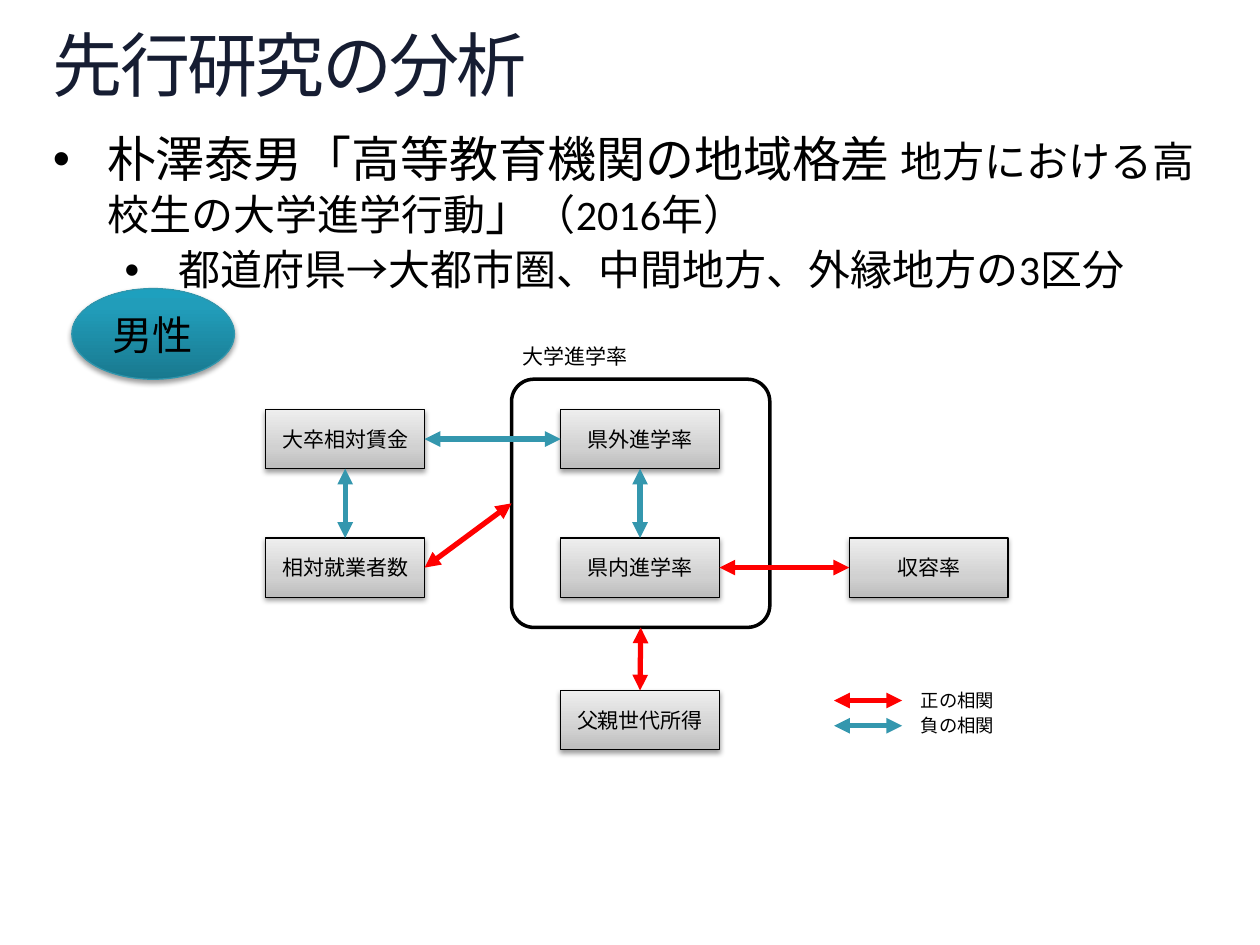
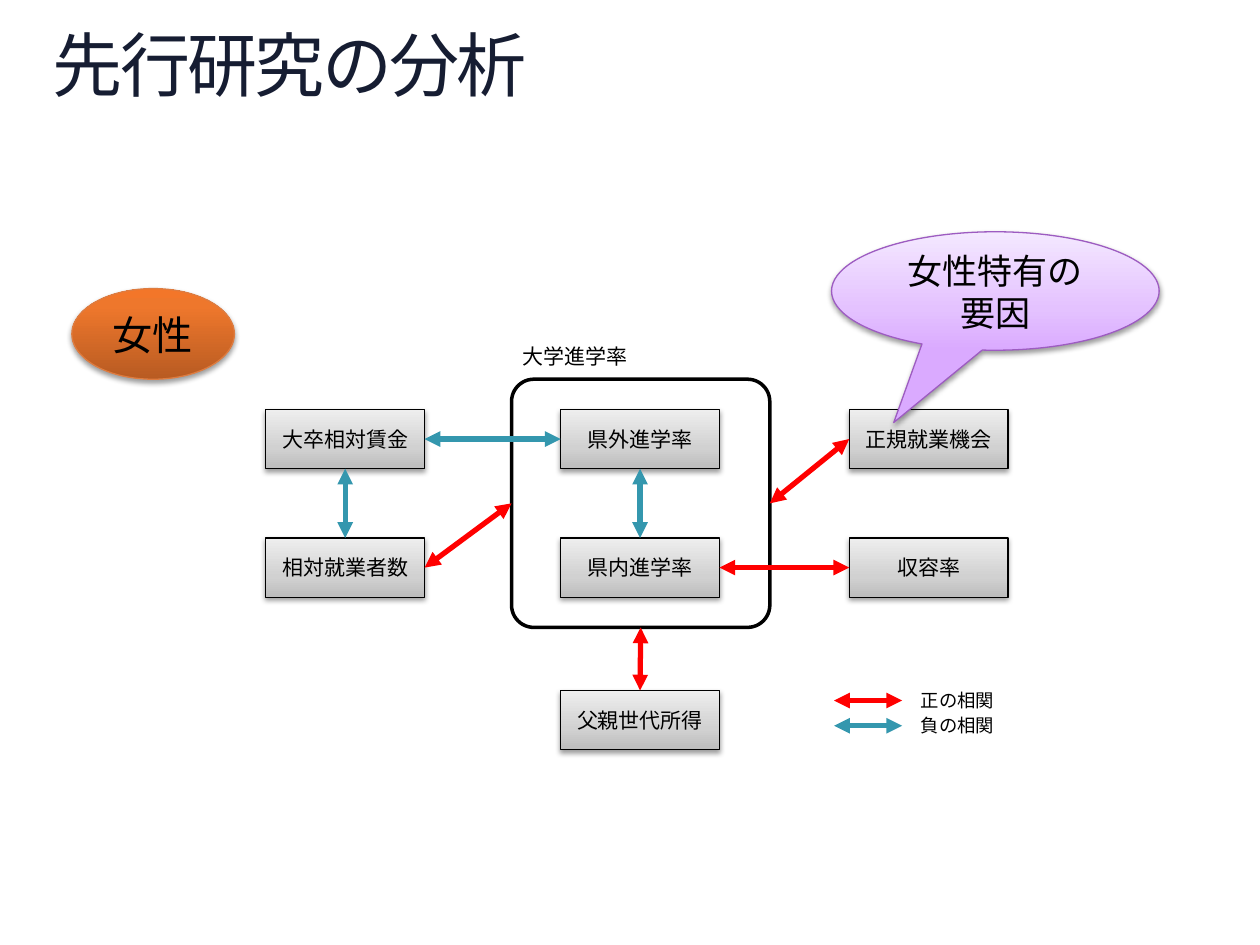
from lxml.etree import SubElement
from pptx import Presentation
from pptx.dml.color import RGBColor
from pptx.enum.lang import MSO_LANGUAGE_ID
from pptx.enum.shapes import MSO_CONNECTOR, MSO_SHAPE
from pptx.enum.text import MSO_ANCHOR, MSO_AUTO_SIZE, PP_ALIGN
from pptx.oxml.ns import qn
from pptx.util import Inches, Pt

COLOURS = {
    "title": "161D32",
    "black": "000000",
    "positive": "FF0000",
    "negative": "3497AE",
    "male_line": "3096AD",
    "female_line": "DE7C40",
    "callout_line": "9D5CC1",
}
GRADIENTS = {
    "node": [(0, "BDBDBD"), (35, "D1D1D1"), (100, "EEEEEE")],
    "male": [(0, "19798F"), (80, "219DBA"), (100, "1EA0BE")],
    "female": [(0, "B85B22"), (80, "EE772C"), (100, "F37629")],
    "callout": [(0, "DAAAFF"), (35, "E4C2FF"), (100, "F4E8FF")],
}
TEXT_FONT = "Calibri"
SHAPE_FONT = "Karla"
TITLE = "先行研究の分析"
TOP, LEFT, BOTTOM, RIGHT = range(4)

COLUMNS = (2.11, 4.45, 6.74)
ROWS = (3.25, 4.27, 5.48)
NODE_SIZE = (1.26, 0.47)
SHARED_NODES = {
    "県外進学率": (1, 0),
    "県内進学率": (1, 1),
    "相対就業者数": (0, 1),
    "大卒相対賃金": (0, 0),
    "収容率": (2, 1),
    "父親世代所得": (1, 2),
}
FRAME = "大学進学率"
SHARED_LINKS = [
    ("県外進学率", BOTTOM, "県内進学率", TOP, "negative"),
    ("収容率", LEFT, "県内進学率", RIGHT, "positive"),
    ("大卒相対賃金", BOTTOM, "相対就業者数", TOP, "negative"),
    ("大卒相対賃金", RIGHT, "県外進学率", LEFT, "negative"),
    (FRAME, LEFT, "相対就業者数", RIGHT, "positive"),
    (FRAME, BOTTOM, "父親世代所得", TOP, "positive"),
]
LEGEND = [("正の相関", "positive"), ("負の相関", "negative")]


def colour(name):
    return RGBColor.from_string(COLOURS[name])


def add_span(para, text, size, font=TEXT_FONT, tint="black"):
    span = para.add_run()
    span.text = text
    span.font.size = Pt(size)
    span.font.name = font
    span.font.language_id = MSO_LANGUAGE_ID.JAPANESE
    span.font.color.rgb = colour(tint)
    return span


def clear_insets(frame):
    frame.margin_left = frame.margin_right = 0
    frame.margin_top = frame.margin_bottom = 0
    frame.vertical_anchor = MSO_ANCHOR.TOP
    frame.auto_size = MSO_AUTO_SIZE.NONE
    frame.word_wrap = True


def add_titled_page(deck):
    page = deck.slides.add_slide(deck.slide_layouts[5])
    title = page.shapes.title
    title.left, title.top = Inches(0.42), Inches(0.25)
    title.width, title.height = Inches(9.17), Inches(0.61)
    clear_insets(title.text_frame)
    para = title.text_frame.paragraphs[0]
    para.alignment = PP_ALIGN.LEFT
    para.line_spacing = 0.9
    span = add_span(para, TITLE, 40, tint="title")
    span.font._element.set("spc", "-150")
    return page


def add_label(page, text, left, top, width, height, size):
    box = page.shapes.add_textbox(Inches(left), Inches(top), Inches(width), Inches(height))
    box.text_frame.word_wrap = True
    add_span(box.text_frame.paragraphs[0], text, size)


def add_bullet(para, margin, spans):
    properties = para._p.get_or_add_pPr()
    properties.set("marL", str(Inches(margin)))
    properties.set("indent", str(Inches(-0.43)))
    para.line_spacing = 0.9
    SubElement(properties, qn("a:buFont"), typeface="Arial")
    SubElement(properties, qn("a:buChar"), char="•")
    for text, size in spans:
        add_span(para, text, size)


def add_study_summary(page):
    box = page.shapes.add_textbox(Inches(0.42), Inches(1.07), Inches(9.17), Inches(1.29))
    clear_insets(box.text_frame)
    add_bullet(box.text_frame.paragraphs[0], 0.43, [
        ("朴澤泰男「高等教育機関の地域格差 ", 28),
        ("地方における高校生の大学進学行動", 24),
        ("」", 28),
        ("（2016年）", 24),
    ])
    para = box.text_frame.add_paragraph()
    para.level = 1
    para.space_before = Pt(5)
    add_bullet(para, 1, [("都道府県→大都市圏、中間地方、外縁地方の3区分", 24)])


def fill_gradient(shape, stops):
    shape.fill.gradient()
    shape.fill.gradient_angle = 90
    stop_list = shape.element.spPr.find(qn("a:gradFill")).find(qn("a:gsLst"))
    stop_list.clear()
    for position, value in stops:
        stop = SubElement(stop_list, qn("a:gs"), pos=str(position * 1000))
        SubElement(stop, qn("a:srgbClr"), val=value)


def add_shadow(shape):
    shape.shadow.inherit = False
    effects = shape.element.spPr.find(qn("a:effectLst"))
    shadow = SubElement(effects, qn("a:outerShdw"), blurRad=str(Pt(3.1)),
                        dist=str(Pt(1.6)), dir="5400000", rotWithShape="0")
    tint = SubElement(shadow, qn("a:srgbClr"), val=COLOURS["black"])
    SubElement(tint, qn("a:alpha"), val="38000")


def add_glossy_shape(page, kind, text, left, top, width, height, gradient, line, size):
    shape = page.shapes.add_shape(kind, Inches(left), Inches(top), Inches(width), Inches(height))
    fill_gradient(shape, GRADIENTS[gradient])
    shape.line.color.rgb = colour(line)
    shape.line.width = Pt(0.75)
    add_shadow(shape)
    shape.text_frame.word_wrap = True
    shape.text_frame.vertical_anchor = MSO_ANCHOR.MIDDLE
    para = shape.text_frame.paragraphs[0]
    para.alignment = PP_ALIGN.CENTER
    add_span(para, text, size, SHAPE_FONT)
    return shape


def add_frame(page):
    frame = page.shapes.add_shape(MSO_SHAPE.ROUNDED_RECTANGLE, Inches(4.06), Inches(3.01),
                                  Inches(2.05), Inches(1.97))
    frame.adjustments[0] = 0.09
    frame.fill.background()
    frame.line.color.rgb = colour("black")
    frame.line.width = Pt(2)
    frame.shadow.inherit = False
    add_label(page, FRAME, 4.05, 2.68, 1.18, 0.3, 12)
    return frame


def add_double_arrow(page, tint, start=(0, 0), end=(0, 0)):
    ends = [Inches(value) for value in (*start, *end)]
    arrow = page.shapes.add_connector(MSO_CONNECTOR.STRAIGHT, *ends)
    arrow.line.color.rgb = colour(tint)
    arrow.line.width = Pt(3)
    properties = arrow.element.spPr
    line = properties.find(qn("a:ln"))
    for tag in ("a:headEnd", "a:tailEnd"):
        SubElement(line, qn(tag), type="triangle")
    SubElement(properties, qn("a:effectLst"))
    return arrow


def add_legend(page):
    for index, (text, tint) in enumerate(LEGEND):
        middle = 5.56 + 0.2 * index
        add_double_arrow(page, tint, (7.16, middle), (6.62, middle))
        add_label(page, text, 7.21, middle - 0.14, 0.8, 0.29, 10.5)


def add_diagram(page, nodes, links):
    shapes = {}
    for name, (column, row) in nodes.items():
        shapes[name] = add_glossy_shape(page, MSO_SHAPE.RECTANGLE, name, COLUMNS[column],
                                        ROWS[row], *NODE_SIZE, "node", "black", 12)
    shapes[FRAME] = add_frame(page)
    for start, start_side, end, end_side, tint in links:
        arrow = add_double_arrow(page, tint)
        arrow.begin_connect(shapes[start], start_side)
        arrow.end_connect(shapes[end], end_side)
    add_legend(page)


def add_group_badge(page, text, gradient):
    add_glossy_shape(page, MSO_SHAPE.OVAL, text, 0.57, 2.29, 1.29, 0.72,
                     gradient, f"{gradient}_line", 23)


def add_callout(page, text):
    callout = add_glossy_shape(page, MSO_SHAPE.OVAL_CALLOUT, text, 6.6, 1.84, 2.6, 0.94,
                               "callout", "callout_line", 20)
    callout.adjustments[0] = -0.31
    callout.adjustments[1] = 1.11


def main():
    deck = Presentation()
    deck.slide_width, deck.slide_height = Inches(10), Inches(7.5)

    male_page = add_titled_page(deck)
    add_study_summary(male_page)
    add_diagram(male_page, SHARED_NODES, SHARED_LINKS)
    add_group_badge(male_page, "男性", "male")

    female_page = add_titled_page(deck)
    add_group_badge(female_page, "女性", "female")
    add_diagram(female_page, SHARED_NODES | {"正規就業機会": (2, 0)},
                SHARED_LINKS + [("正規就業機会", LEFT, FRAME, RIGHT, "positive")])
    add_callout(female_page, "女性特有の要因")

    deck.save("out.pptx")


if __name__ == "__main__":
    main()
